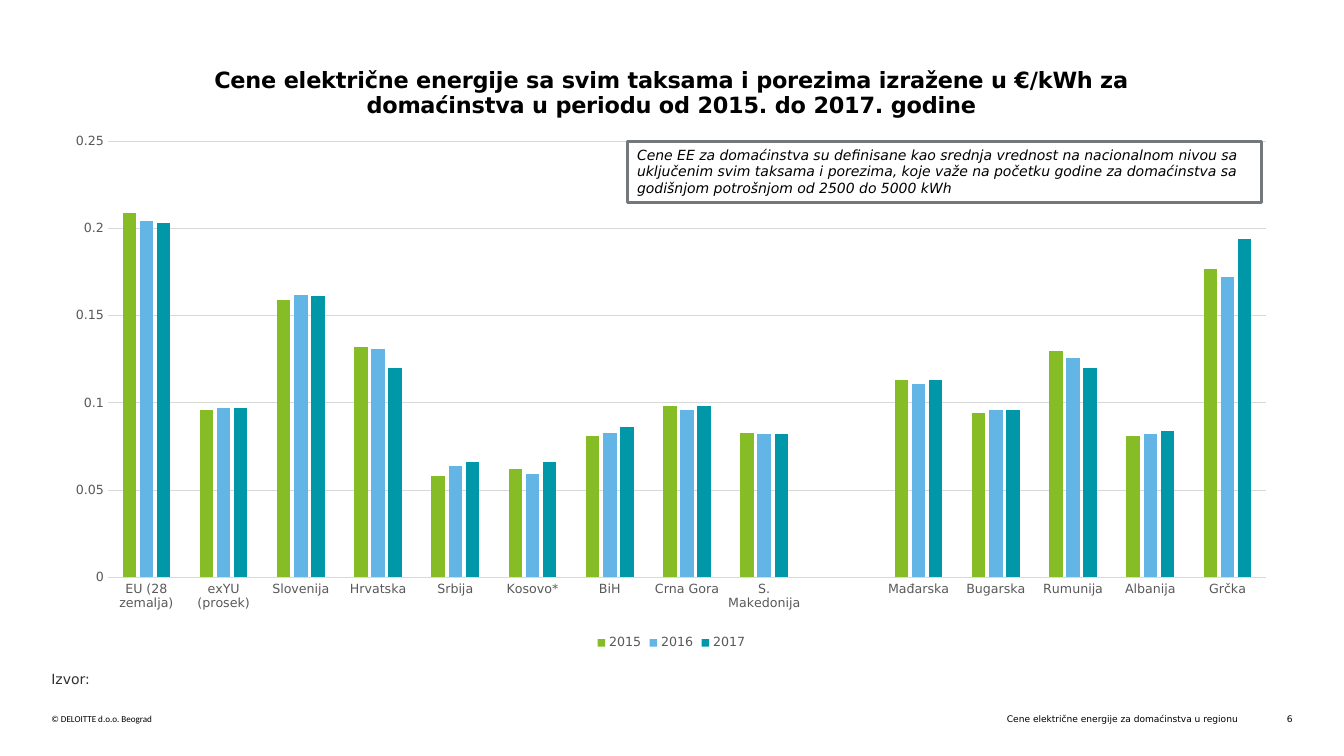
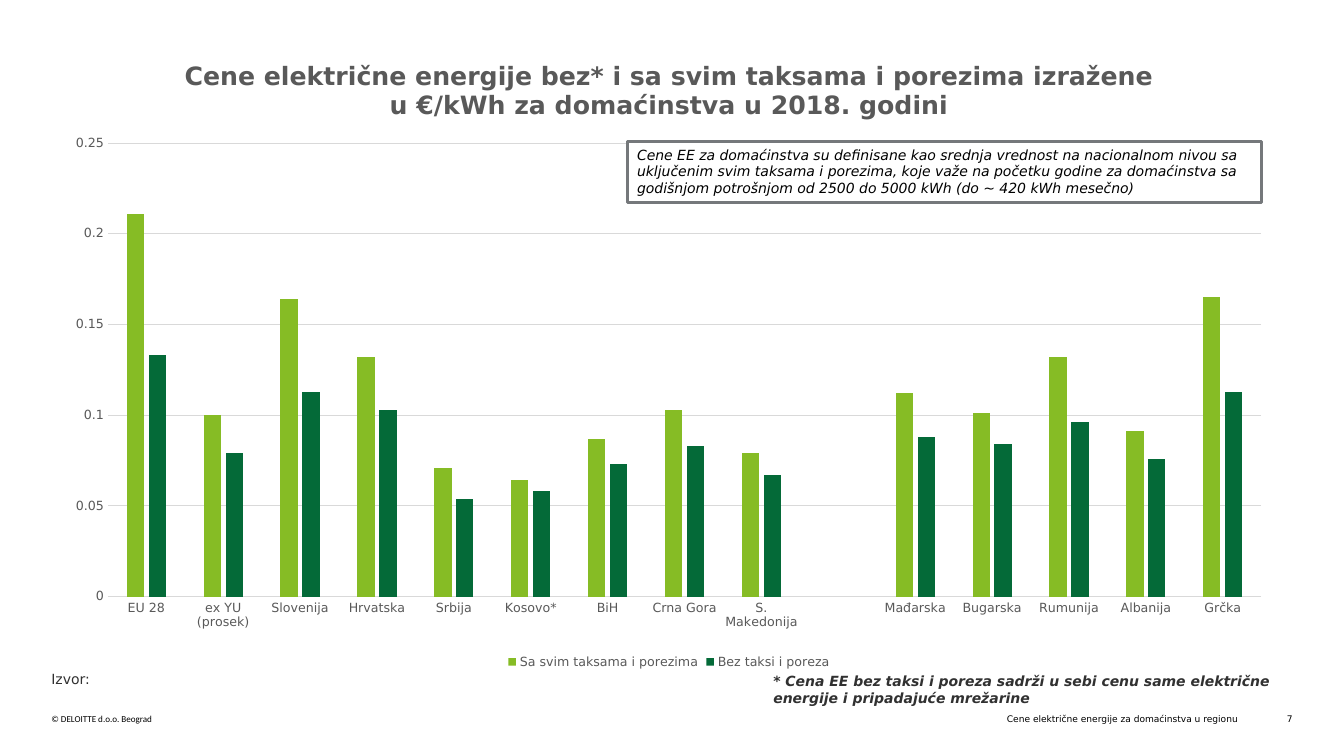
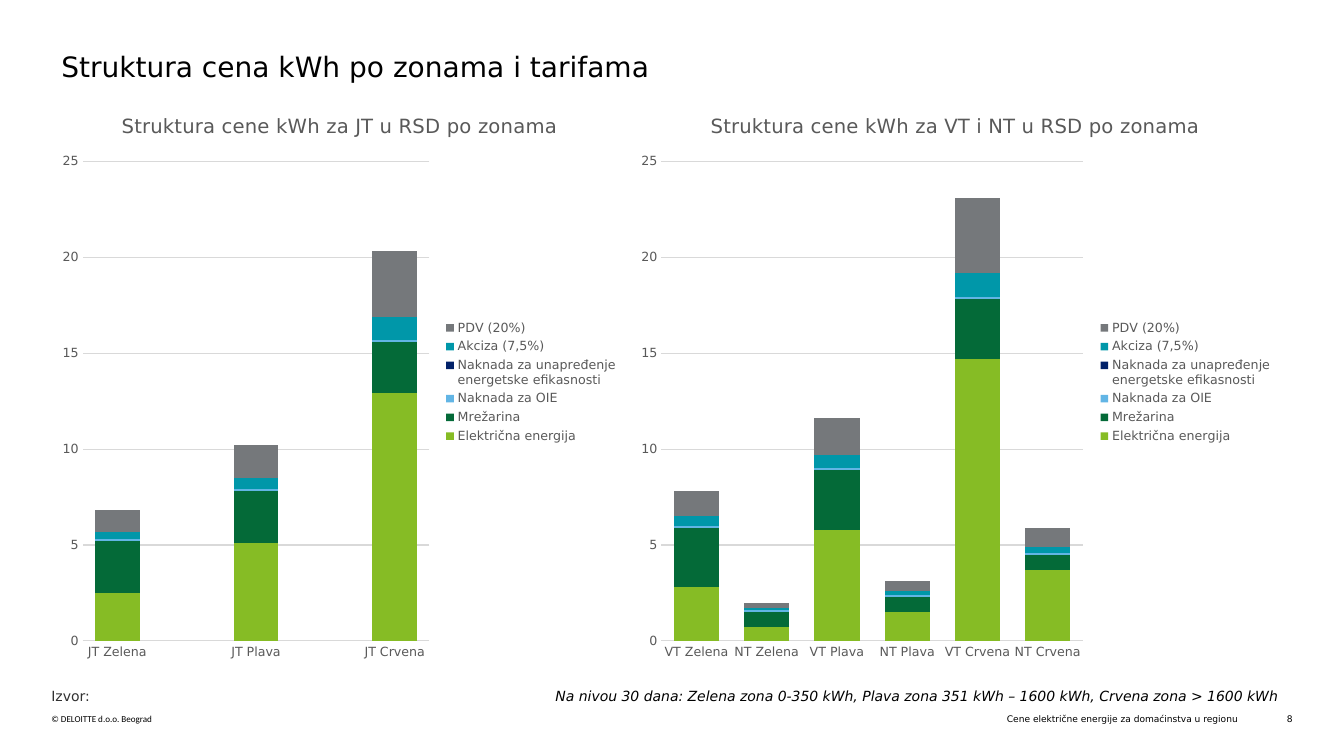
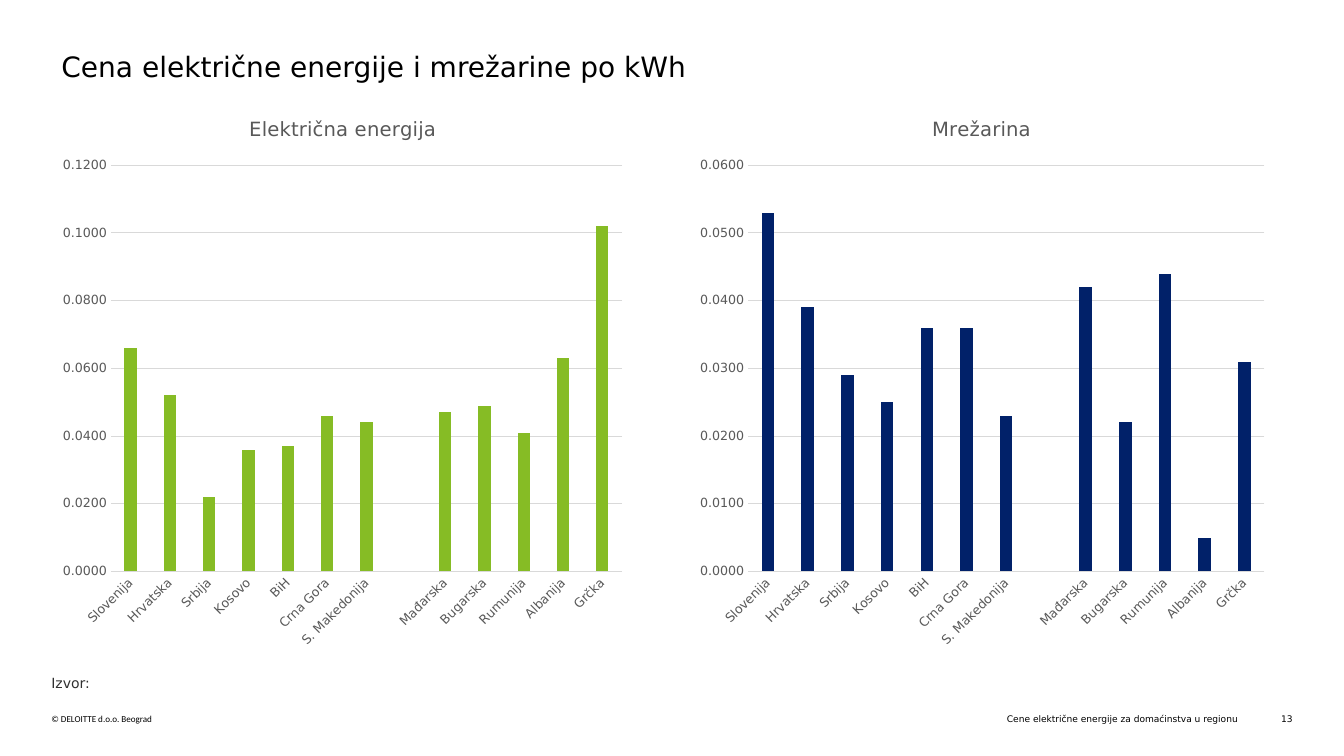
import pptx
import pptx.chart.data
import pptx.dml.color
import pptx.enum.chart
import pptx.enum.shapes
import pptx.enum.text
import pptx.oxml
import pptx.oxml.ns
import pptx.util

Inches, Pt, qn = pptx.util.Inches, pptx.util.Pt, pptx.oxml.ns.qn
FONT = "DejaVu Sans"
COLORS = {
    "black": "000000", "white": "FFFFFF", "ink": "313131", "label": "595959",
    "grid": "D9D9D9", "gray": "75787B", "lime": "86BC25", "green": "046A38",
    "sky": "62B5E5", "teal": "0097A9", "navy": "012169",
}

# Content
FOOTER = "Cene električne energije za domaćinstva u regionu"
RIGHTS = "© DELOITTE d.o.o. Beograd"
NOTE = ("Cene EE za domaćinstva su definisane kao srednja vrednost na nacionalnom nivou "
        "sa uključenim svim taksama i porezima, koje važe na početku godine za domaćinstva "
        "sa godišnjom potrošnjom od 2500 do 5000 kWh")
STATES = ["Slovenija", "Hrvatska", "Srbija", "Kosovo", "BiH", "Crna Gora",
          "S. Makedonija", "", "Mađarska", "Bugarska", "Rumunija", "Albanija", "Grčka"]
STARRED = [s + "*" if s == "Kosovo" else s for s in STATES]
PARTS = [("Električna energija", "lime"), ("Mrežarina", "green"),
         ("Naknada za OIE", "sky"),
         ("Naknada za unapređenje energetske efikasnosti", "navy"),
         ("Akciza (7,5%)", "teal"), ("PDV (20%)", "gray")]


def stack(rows):
    return [(name, color, vals) for (name, color), vals in zip(PARTS, rows)]


# Each chart: box and plot are left, top, width, height in inches
SLIDES = [
    dict(page=6, source=6.65, note=NOTE, charts=[dict(
        box=(0.51, 0.44, 12.3, 6.05), plot=(1.07, 1.4, 11.49, 4.33),
        title="Cene električne energije sa svim taksama i porezima izražene u €/kWh "
              "za domaćinstva u periodu od 2015. do 2017. godine",
        size=16, bold=True, color="black", top=0.25, step=0.05, legend="BOTTOM",
        cats=["EU (28 zemalja)", "exYU (prosek)"] + STARRED,
        series=[
            ("2015", "lime", [0.209, 0.096, 0.159, 0.132, 0.058, 0.062, 0.081, 0.098,
                              0.083, None, 0.113, 0.094, 0.13, 0.081, 0.177]),
            ("2016", "sky", [0.204, 0.097, 0.162, 0.131, 0.064, 0.059, 0.083, 0.096,
                             0.082, None, 0.111, 0.096, 0.126, 0.082, 0.172]),
            ("2017", "teal", [0.203, 0.097, 0.161, 0.12, 0.066, 0.066, 0.086, 0.098,
                              0.082, None, 0.113, 0.096, 0.12, 0.084, 0.194])])]),
    dict(page=7, source=6.65, note=NOTE + " (do ~ 420 kWh mesečno)",
         remark="* Cena EE bez taksi i poreza sadrži u sebi cenu same električne "
                "energije i pripadajuće mrežarine",
         charts=[dict(
             box=(0.51, 0.36, 12.25, 6.32), plot=(1.07, 1.42, 11.44, 4.5),
             title="Cene električne energije bez* i sa svim taksama i porezima "
                   "izražene u €/kWh za domaćinstva u 2018. godini",
             size=18, bold=True, top=0.25, step=0.05, legend="BOTTOM",
             cats=["EU 28", "ex YU (prosek)"] + STARRED,
             series=[
                 ("Sa svim taksama i porezima", "lime",
                  [0.211, 0.1, 0.164, 0.132, 0.071, 0.064, 0.087, 0.103, 0.079, None,
                   0.112, 0.101, 0.132, 0.091, 0.165]),
                 ("Bez taksi i poreza", "green",
                  [0.133, 0.079, 0.113, 0.103, 0.054, 0.058, 0.073, 0.083, 0.067, None,
                   0.088, 0.084, 0.096, 0.076, 0.113])])]),
    dict(page=8, source=6.82, title="Struktura cena kWh po zonama i tarifama",
         zones="Na nivou 30 dana: Zelena zona 0-350 kWh, Plava zona 351 kWh – 1600 kWh, "
               "Crvena zona > 1600 kWh",
         charts=[
             dict(box=(0.51, 0.91, 5.72, 5.76), plot=(0.82, 1.6, 3.44, 4.76),
                  title="Struktura cene kWh za JT u RSD po zonama",
                  top=25, step=5, legend="RIGHT", stacked=True,
                  cats=["JT Zelena", "", "JT Plava", "", "JT Crvena"],
                  series=stack([[2.5, None, 5.1, None, 12.9], [2.7, None, 2.7, None, 2.7],
                                [0.1, None, 0.1, None, 0.1], [0, None, 0, None, 0],
                                [0.4, None, 0.6, None, 1.2], [1.1, None, 1.7, None, 3.4]])),
             dict(box=(6.23, 0.91, 6.49, 5.76), plot=(6.56, 1.6, 4.18, 4.76),
                  title="Struktura cene kWh za VT i NT u RSD po zonama",
                  top=25, step=5, legend="RIGHT", stacked=True,
                  cats=["VT Zelena", "NT Zelena", "VT Plava", "NT Plava",
                        "VT Crvena", "NT Crvena"],
                  series=stack([[2.8, 0.7, 5.8, 1.5, 14.7, 3.7],
                                [3.1, 0.8, 3.1, 0.8, 3.1, 0.8],
                                [0.1] * 6, [0] * 6,
                                [0.5, 0.1, 0.7, 0.2, 1.3, 0.3],
                                [1.3, 0.3, 1.9, 0.5, 3.9, 1]]))]),
    dict(page=13, source=6.69, title="Cena električne energije i mrežarine po kWh",
         charts=[
             dict(box=(0.51, 0.94, 5.78, 5.6), plot=(1.1, 1.64, 5.07, 4.03),
                  title="Električna energija", top=0.12, step=0.02,
                  form="0.0000", turn=-45, cats=STATES,
                  series=[("Električna energija", "lime",
                           [0.066, 0.052, 0.022, 0.036, 0.037, 0.046, 0.044, None,
                            0.047, 0.049, 0.041, 0.063, 0.102])]),
             dict(box=(6.82, 0.94, 5.83, 5.6), plot=(7.42, 1.64, 5.12, 4.03),
                  title="Mrežarina", top=0.06, step=0.01,
                  form="0.0000", turn=-45, cats=STATES,
                  series=[("Mrežarina", "navy",
                           [0.053, 0.039, 0.029, 0.025, 0.036, 0.036, 0.023, None,
                            0.042, 0.022, 0.044, 0.005, 0.031])])]),
]


def rgb(name):
    return pptx.dml.color.RGBColor.from_string(COLORS[name])


def style(font, size, color="label", bold=False, italic=False, face=FONT):
    font.name, font.size, font.bold, font.italic = face, Pt(size), bold, italic
    font.color.rgb = rgb(color)


def put(slide, text, box, size=10, color="black", align="LEFT", pad=False,
        frame=False, **look):
    """Add text in a box, plain or framed."""
    place = [Inches(v) for v in box]
    if frame:
        shape = slide.shapes.add_shape(pptx.enum.shapes.MSO_SHAPE.RECTANGLE, *place)
        shape.shadow.inherit = False
        shape.fill.solid()
        shape.fill.fore_color.rgb = rgb("white")
        shape.line.color.rgb = rgb("gray")
        shape.line.width = Pt(2)
    else:
        shape = slide.shapes.add_textbox(*place)
    body = shape.text_frame
    body.word_wrap = True
    body.vertical_anchor = pptx.enum.text.MSO_ANCHOR.TOP
    if not pad:
        body.margin_left = body.margin_right = body.margin_top = body.margin_bottom = 0
    para = body.paragraphs[0]
    para.alignment = pptx.enum.text.PP_ALIGN[align]
    run = para.add_run()
    run.text = text
    style(run.font, size, color, **look)


def fix_plot(chart, box, plot):
    """Pin the inner plot area, given in slide inches."""
    share = {"x": (plot[0] - box[0]) / box[2], "y": (plot[1] - box[1]) / box[3],
             "w": plot[2] / box[2], "h": plot[3] / box[3]}
    marks = [("layoutTarget", "inner"), ("xMode", "edge"), ("yMode", "edge")]
    marks += [(key, f"{val:.4f}") for key, val in share.items()]
    inner = "".join(f'<c:{tag} val="{val}"/>' for tag, val in marks)
    area = chart.element.find(".//" + qn("c:plotArea"))
    for old in area.findall(qn("c:layout")):
        area.remove(old)
    area.insert(0, pptx.oxml.parse_xml(
        f'<c:layout {pptx.oxml.ns.nsdecls("c")}><c:manualLayout>{inner}'
        '</c:manualLayout></c:layout>'))


def draw(slide, box, plot, title, cats, series, top, step, size=14, bold=False,
         color="label", legend=None, stacked=False, form="General", turn=0):
    """Add one column chart."""
    data = pptx.chart.data.CategoryChartData()
    data.categories = cats
    for name, _, vals in series:
        data.add_series(name, vals)
    kinds = pptx.enum.chart.XL_CHART_TYPE
    kind = kinds.COLUMN_STACKED if stacked else kinds.COLUMN_CLUSTERED
    chart = slide.shapes.add_chart(kind, *[Inches(v) for v in box], data).chart
    style(chart.font, 10, "black")

    # Title and legend
    chart.has_title = True
    head = chart.chart_title
    head.include_in_layout = False
    run = head.text_frame.paragraphs[0].add_run()
    run.text = title
    style(run.font, size, color, bold=bold)
    chart.has_legend = bool(legend)
    if legend:
        chart.legend.position = pptx.enum.chart.XL_LEGEND_POSITION[legend]
        chart.legend.include_in_layout = False
        style(chart.legend.font, 9)

    # Axes
    for axis in (chart.category_axis, chart.value_axis):
        axis.major_tick_mark = axis.minor_tick_mark = pptx.enum.chart.XL_TICK_MARK.NONE
        style(axis.tick_labels.font, 9)
    base, scale = chart.category_axis, chart.value_axis
    scale.has_major_gridlines = True
    for line in (base.format.line, scale.major_gridlines.format.line):
        line.color.rgb = rgb("grid")
        line.width = Pt(0.75)
    scale.format.line.fill.background()
    scale.minimum_scale, scale.maximum_scale, scale.major_unit = 0, top, step
    scale.tick_labels.number_format = form
    scale.tick_labels.number_format_is_linked = False
    if turn:
        label = chart.element.find(f".//{qn('c:catAx')}/{qn('c:txPr')}/{qn('a:bodyPr')}")
        label.set("rot", str(turn * 60000))
        label.set("vert", "horz")

    # Bars
    bars = chart.plots[0]
    bars.vary_by_categories = False
    bars.gap_width, bars.overlap = (55, 100) if stacked else (219, -27)
    for item, (_, tint, _) in zip(bars.series, series):
        item.format.fill.solid()
        item.format.fill.fore_color.rgb = rgb(tint)
        item.invert_if_negative = False
    fix_plot(chart, box, plot)


def build(deck, page, source, charts, title=None, note=None, remark=None, zones=None):
    """Add one slide with its footer, charts and notes."""
    slide = deck.slides.add_slide(deck.slide_layouts[6])
    put(slide, FOOTER, (6.93, 7.08, 5.35, 0.11), size=6.5, align="RIGHT")
    put(slide, RIGHTS, (0.51, 7.08, 5.86, 0.11), size=6.5, face="Calibri")
    put(slide, str(page), (12.48, 7.08, 0.34, 0.11), size=6.5, align="RIGHT")
    if title:
        put(slide, title, (0.51, 0.44, 12.31, 0.37), size=20, pad=True)
    for chart in charts:
        draw(slide, **chart)
    put(slide, "Izvor:", (0.51, source, 0.61, 0.17), color="ink")
    if note:
        put(slide, note, (6.22, 1.4, 6.29, 0.61), pad=True, frame=True, italic=True)
    if remark:
        put(slide, remark, (7.67, 6.67, 4.95, 0.34), color="ink", bold=True, italic=True)
    if zones:
        put(slide, zones, (5.41, 6.77, 7.92, 0.27), pad=True, italic=True)


def main():
    deck = pptx.Presentation()
    deck.slide_width, deck.slide_height = Inches(13.33), Inches(7.5)
    for item in SLIDES:
        build(deck, **item)
    deck.save("out.pptx")


if __name__ == "__main__":
    main()
